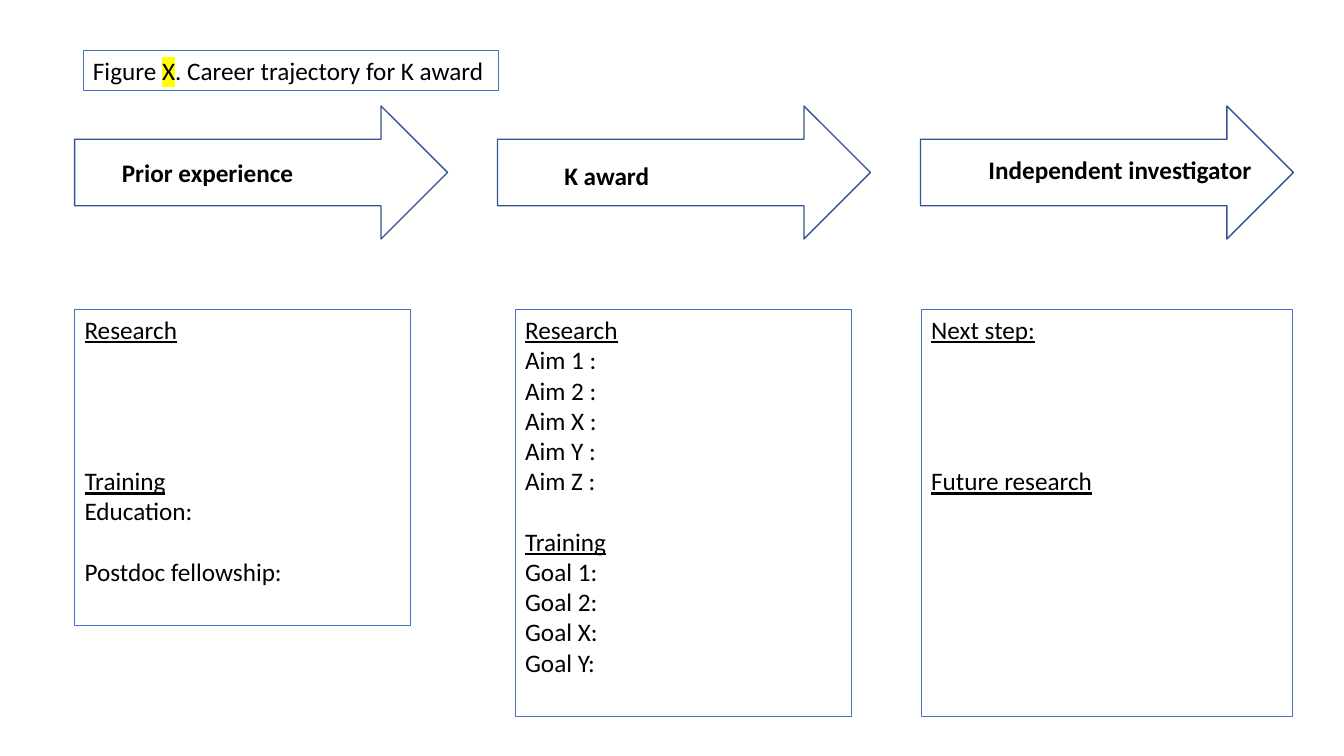
from dataclasses import dataclass

from lxml import etree
from pptx import Presentation
from pptx.dml import color
from pptx.enum import shapes, text
from pptx.oxml import ns
from pptx.util import Pt

FONT = "Calibri"
SIZE = 18
LINE_PITCH = 21.6
ARROW_LEFT, ARROW_STEP = 53.3, 302.1
PANEL_TOP = 221


@dataclass
class Line:
    words: str
    underline: bool = False
    blank_above: int = 0


@dataclass
class Stage:
    title: str
    title_left: float
    title_top: float
    title_width: float
    panel_left: float
    panel_width: float
    panel_height: float
    lines: list[Line]


STAGES = [
    Stage("Prior experience", 79.9, 108.9, 137.5, 53.3, 240, 225.7, [
        Line("Research", True),
        Line("Training", True, 4),
        Line("Education:"),
        Line("Postdoc fellowship:", blank_above=1),
    ]),
    Stage("K award", 396, 111, 75.6, 368, 240, 290.8, [
        Line("Research", True),
        *[Line(f"Aim {name} :") for name in "12XYZ"],
        Line("Training", True, 1),
        *[Line(f"Goal {name}:") for name in "12XY"],
    ]),
    Stage("Independent investigator", 699, 106.7, 203.8, 658.1, 265.2, 290.8, [
        Line("Next step:", True),
        Line("Future research", True, 4),
    ]),
]


def rgb(value: str) -> color.RGBColor:
    return color.RGBColor.from_string(value)


def add_outline(page, kind, left: float, top: float, width: float,
                height: float, line_color: str, weight: float):
    shape = page.shapes.add_shape(kind, Pt(left), Pt(top), Pt(width), Pt(height))
    shape.shadow.inherit = False
    shape.fill.background()
    shape.line.color.rgb = rgb(line_color)
    shape.line.width = Pt(weight)
    return shape


def add_box(page, left: float, top: float, width: float, height: float):
    box = add_outline(page, shapes.MSO_SHAPE.RECTANGLE, left, top, width,
                      height, "4472C4", 0.75)
    box.text_frame.vertical_anchor = text.MSO_ANCHOR.TOP
    box.text_frame.word_wrap = True
    return box


def add_span(para, words: str, bold: bool = False, underline: bool = False,
             highlight: str = "") -> None:
    para.alignment = text.PP_ALIGN.LEFT
    span = para.add_run()
    span.text = words
    font = span.font
    font.size = Pt(SIZE)
    font.bold = bold
    font.underline = underline
    font.color.rgb = rgb("000000")
    font.name = FONT
    if highlight:
        mark = etree.Element(ns.qn("a:highlight"))
        etree.SubElement(mark, ns.qn("a:srgbClr"), val=highlight)
        span.font.fill
        properties = span._r.get_or_add_rPr()
        properties.find(ns.qn("a:solidFill")).addnext(mark)


def add_stage(page, index: int, stage: Stage) -> None:
    add_outline(page, shapes.MSO_SHAPE.RIGHT_ARROW,
                ARROW_LEFT + index * ARROW_STEP, 75.7, 266.4, 95, "325491", 1)
    title = page.shapes.add_textbox(Pt(stage.title_left), Pt(stage.title_top),
                                    Pt(stage.title_width), Pt(29))
    title.text_frame.word_wrap = False
    title.text_frame.auto_size = text.MSO_AUTO_SIZE.SHAPE_TO_FIT_TEXT
    add_span(title.text_frame.paragraphs[0], stage.title, bold=True)

    panel = add_box(page, stage.panel_left, PANEL_TOP, stage.panel_width,
                    stage.panel_height)
    frame = panel.text_frame
    for number, line in enumerate(stage.lines):
        para = frame.add_paragraph() if number else frame.paragraphs[0]
        if line.blank_above:
            para.space_before = Pt(line.blank_above * LINE_PITCH)
        add_span(para, line.words, underline=line.underline)


def main() -> None:
    deck = Presentation()
    deck.slide_width, deck.slide_height = Pt(960), Pt(540)
    page = deck.slides.add_slide(deck.slide_layouts[6])
    for index, stage in enumerate(STAGES):
        add_stage(page, index, stage)
    caption = add_box(page, 59.3, 36, 296.6, 29).text_frame.paragraphs[0]
    add_span(caption, "Figure ")
    add_span(caption, "X", highlight="FFFF00")
    add_span(caption, ". Career trajectory for K award")
    deck.save("out.pptx")


if __name__ == "__main__":
    main()
